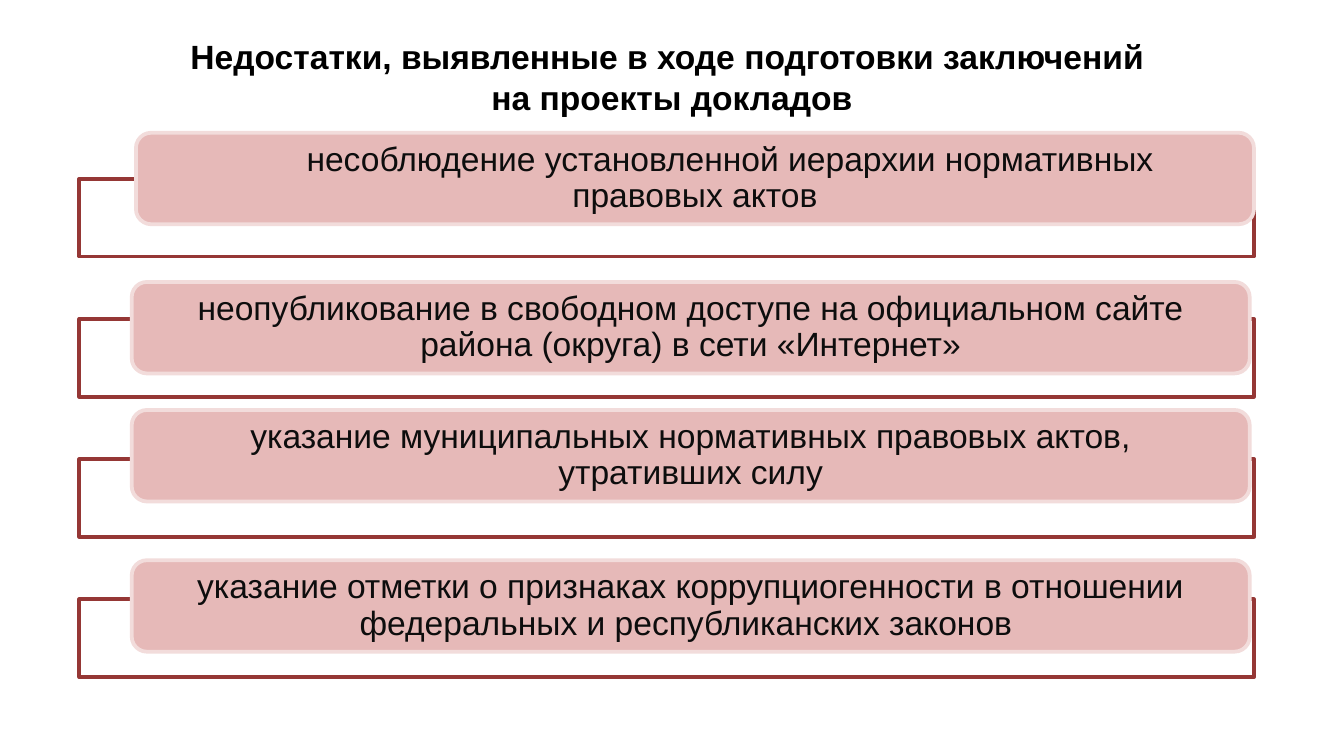
from lxml.etree import SubElement
from pptx import Presentation
from pptx.dml.color import RGBColor
from pptx.enum.shapes import MSO_SHAPE
from pptx.enum.text import MSO_ANCHOR, MSO_AUTO_SIZE, PP_ALIGN
from pptx.oxml.ns import qn
from pptx.util import Cm, Pt

# Content
TITLE = ["Недостатки, выявленные в ходе подготовки заключений ",
         "на проекты докладов"]
# Text, card left, card top, first line indent (cm)
CARDS = [
    ("несоблюдение установленной иерархии нормативных правовых актов",
     2.57, 2.51, 1.33),
    ("неопубликование в свободном доступе на официальном сайте района "
     "(округа) в сети «Интернет»", 2.49, 5.33, 0),
    ("указание муниципальных нормативных правовых актов, утративших силу",
     2.49, 7.75, 0),
    ("указание отметки о признаках коррупциогенности в отношении "
     "федеральных и республиканских законов ", 2.49, 10.59, 0),
]

THEME = {
    "font": "Arial", "size": Pt(18), "line": Pt(2),
    "title": RGBColor.from_string("000000"),
    "text": RGBColor.from_string("0D0D0D"),
    "frame": RGBColor.from_string("FFFFFF"),
    "edge": RGBColor.from_string("953735"),
    "card": RGBColor.from_string("E6B9B8"),
    "rim": RGBColor.from_string("F2DCDB"),
}

# Layout in cm
FRAME_X, FRAME_Y, FRAME_W, FRAME_H = 1.5, 3.38, 22.2, 1.47
STEP = 2.65
CARD_W, CARD_H = 21.13, 1.73


def style(para, color, bold=False):
    para.alignment = PP_ALIGN.CENTER
    for run in para.runs:
        font = run.font
        font.name, font.size, font.bold = THEME["font"], THEME["size"], bold
        font.color.rgb = color


def add_box(slide, kind, place, fill, line):
    box = slide.shapes.add_shape(kind, *[Cm(v) for v in place])
    box.shadow.inherit = False
    box.fill.solid()
    box.fill.fore_color.rgb = THEME[fill]
    box.line.color.rgb = THEME[line]
    box.line.width = THEME["line"]
    return box


def add_title(slide):
    title = slide.shapes.title
    title.left, title.top = Cm(0.1), Cm(0.56)
    title.width, title.height = Cm(25.2), Cm(1.8)
    frame = title.text_frame
    frame.text = "\n".join(TITLE)
    frame.word_wrap = True
    frame.auto_size = MSO_AUTO_SIZE.NONE
    frame.vertical_anchor = MSO_ANCHOR.TOP
    for para in frame.paragraphs:
        style(para, THEME["title"], bold=True)


def add_frame(slide, row):
    place = (FRAME_X, FRAME_Y + row * STEP, FRAME_W, FRAME_H)
    box = add_box(slide, MSO_SHAPE.RECTANGLE, place, "frame", "edge")
    # Slightly see-through fill
    tint = box.fill._xPr.find(qn("a:solidFill"))[0]
    SubElement(tint, qn("a:alpha"), val="90000")


def add_card(slide, text, left, top, indent):
    place = (left, top, CARD_W, CARD_H)
    box = add_box(slide, MSO_SHAPE.ROUNDED_RECTANGLE, place, "card", "rim")
    frame = box.text_frame
    frame.word_wrap = True
    frame.vertical_anchor = MSO_ANCHOR.MIDDLE
    frame.margin_left = frame.margin_right = Cm(0.58)
    frame.margin_top = frame.margin_bottom = 0
    para = frame.paragraphs[0]
    para.text = text
    para.line_spacing = 0.9
    style(para, THEME["text"])
    if indent:
        para._p.get_or_add_pPr().set("indent", str(Cm(indent)))


def main():
    deck = Presentation()
    deck.slide_width, deck.slide_height = Cm(25.4), Cm(14.29)
    slide = deck.slides.add_slide(deck.slide_layouts[5])
    add_title(slide)
    # Each card lies over its frame
    for row, card in enumerate(CARDS):
        add_frame(slide, row)
        add_card(slide, *card)
    deck.save("out.pptx")


if __name__ == "__main__":
    main()
